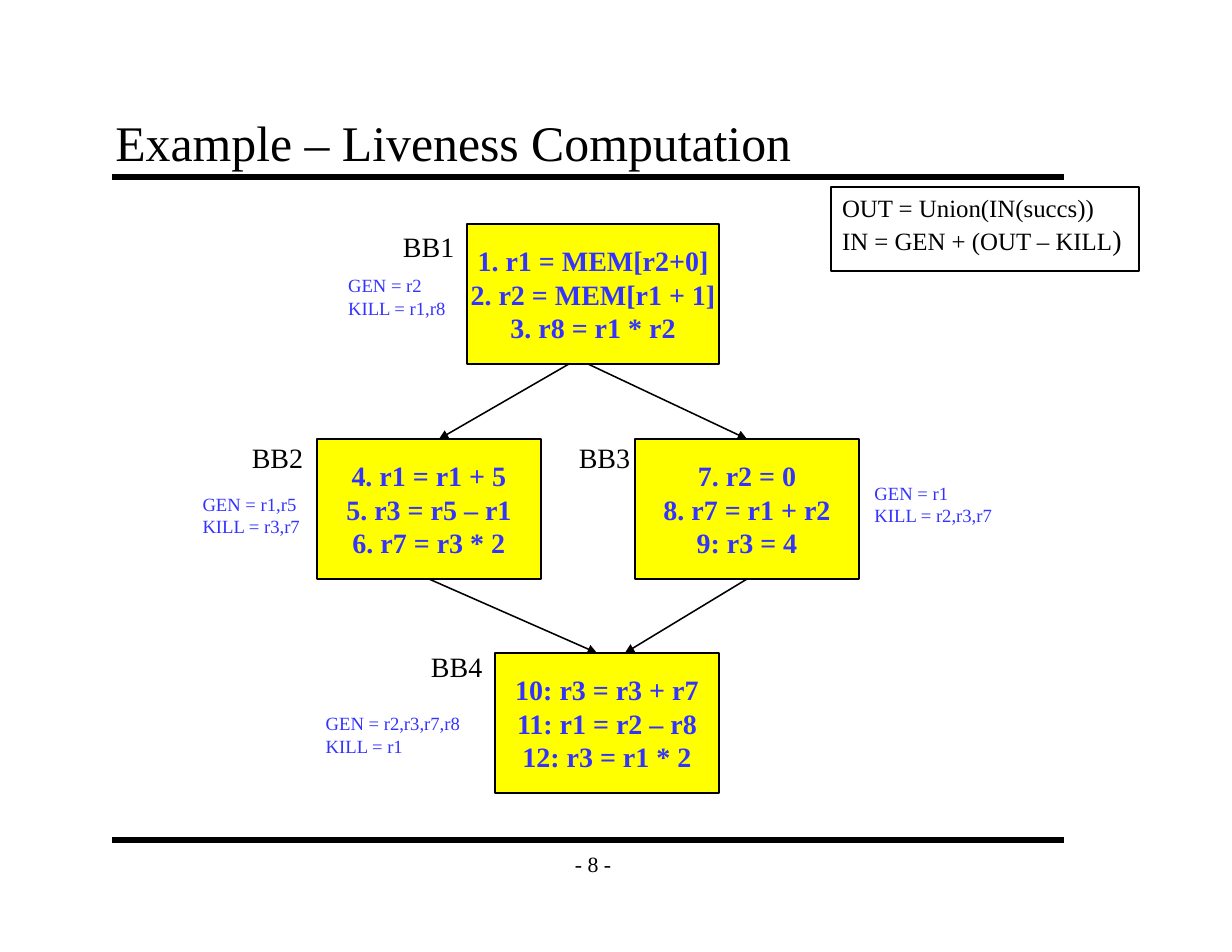
from lxml import etree
from pptx import Presentation
from pptx.dml.color import RGBColor
from pptx.enum.shapes import MSO_CONNECTOR, MSO_SHAPE
from pptx.enum.text import MSO_ANCHOR, PP_ALIGN
from pptx.oxml.ns import qn
from pptx.util import Inches, Pt

COLORS = {"black": "000000", "box": "FFFF00", "code": "3333FF"}
FONT = "Times New Roman"
TOP, BOTTOM = 0, 2

prs = Presentation()
prs.slide_width, prs.slide_height = Inches(11), Inches(8.5)
s = prs.slides.add_slide(prs.slide_layouts[6])


def write(sp, lines, size, color="black", bold=False, align=PP_ALIGN.LEFT,
          anchor=MSO_ANCHOR.TOP, inset=(0.1, 0.05)):
    """Fill a shape with lines; a line is a list of (text, size) or a string."""
    tf = sp.text_frame
    tf.word_wrap = False
    tf.vertical_anchor = anchor
    tf.margin_left = tf.margin_right = Inches(inset[0])
    tf.margin_top = tf.margin_bottom = Inches(inset[1])
    for i, line in enumerate(lines):
        p = tf.add_paragraph() if i else tf.paragraphs[0]
        p.alignment = align
        for text, pt in [(line, size)] if isinstance(line, str) else line:
            r = p.add_run()
            r.text = text
            r.font.name, r.font.size, r.font.bold = FONT, Pt(pt), bold
            r.font.color.rgb = RGBColor.from_string(COLORS[color])


def add_line(x1, y1, x2, y2, width, arrow=False):
    c = s.shapes.add_connector(MSO_CONNECTOR.STRAIGHT, Inches(x1), Inches(y1),
                               Inches(x2), Inches(y2))
    c.line.width = Pt(width)
    c.line.color.rgb = RGBColor.from_string(COLORS["black"])
    if arrow:
        etree.SubElement(c.line._get_or_add_ln(), qn("a:tailEnd"), type="triangle")
    etree.SubElement(c._element.spPr, qn("a:effectLst"))
    return c


# Rules above and below the content, page number, title
for y in (1.58, 7.5):
    add_line(1, y, 9.5, y, 4)
sp = s.shapes.add_textbox(Inches(4.92), Inches(7.5), Inches(0.75), Inches(0.42))
write(sp, ["- 8 -"], 14, align=PP_ALIGN.CENTER, anchor=MSO_ANCHOR.MIDDLE,
      inset=(0.11, 0.06))
sp = s.shapes.add_textbox(Inches(0.92), Inches(0.92), Inches(8.5), Inches(0.67))
write(sp, ["Example – Liveness Computation"], 32, anchor=MSO_ANCHOR.BOTTOM,
      inset=(0.11, 0.06))
sp.text_frame.word_wrap = True

# Dataflow equations with their frame
sp = s.shapes.add_textbox(Inches(7.42), Inches(1.67), Inches(2.7), Inches(0.67))
write(sp, ["OUT = Union(IN(succs))", [("IN = GEN + (OUT – KILL", 16), (")", 18)]], 16)
frame = s.shapes.add_shape(MSO_SHAPE.RECTANGLE, Inches(7.42), Inches(1.67),
                           Inches(2.75), Inches(0.75))
frame.shadow.inherit = False
frame.fill.background()
frame.line.width = Pt(1)
frame.line.color.rgb = RGBColor.from_string(COLORS["black"])

# Basic blocks: name, (left, top, width), code, label position,
# GEN/KILL (left, top, width), GEN/KILL text
blocks = [
    ("BB1", (4.17, 2, 2.25),
     ["1. r1 = MEM[r2+0]", "2. r2 = MEM[r1 + 1]", "3. r8 = r1 * r2"],
     (3.5, 2), (3.01, 2.4, 1.12), ["GEN = r2", "KILL = r1,r8"]),
    ("BB2", (2.83, 3.92, 2),
     ["4. r1 = r1 + 5", "5. r3 = r5 – r1", "6. r7 = r3 * 2"],
     (2.15, 3.88), (1.71, 4.35, 1.12), ["GEN = r1,r5", "KILL = r3,r7"]),
    ("BB3", (5.67, 3.92, 2),
     ["7. r2 = 0", "8. r7 = r1 + r2", "9: r3 = 4"],
     (5.07, 3.88), (7.71, 4.25, 1.3), ["GEN = r1", "KILL = r2,r3,r7"]),
    ("BB4", (4.42, 5.83, 2),
     ["10: r3 = r3 + r7", "11: r1 = r2 – r8", "12: r3 = r1 * 2"],
     (3.75, 5.75), (2.81, 6.31, 1.41), ["GEN = r2,r3,r7,r8", "KILL = r1"]),
]
boxes = {}
for name, (x, y, w), code, label_at, (gx, gy, gw), gen_kill in blocks:
    sp = s.shapes.add_shape(MSO_SHAPE.RECTANGLE, Inches(x), Inches(y),
                            Inches(w), Inches(1.25))
    sp.shadow.inherit = False
    sp.fill.solid()
    sp.fill.fore_color.rgb = RGBColor.from_string(COLORS["box"])
    sp.line.width = Pt(1)
    sp.line.color.rgb = RGBColor.from_string(COLORS["black"])
    write(sp, code, 18, "code", True, PP_ALIGN.CENTER, MSO_ANCHOR.MIDDLE)
    boxes[name] = sp

    label = s.shapes.add_textbox(Inches(label_at[0]), Inches(label_at[1]),
                                 Inches(0.66), Inches(0.4))
    write(label, [name], 18)
    sets = s.shapes.add_textbox(Inches(gx), Inches(gy), Inches(gw), Inches(0.5))
    write(sets, gen_kill, 12, "code")

# Control flow edges, joined where they meet the middle of a side
add_line(5.08, 3.25, 3.92, 3.92, 1, arrow=True)
c = add_line(5.25, 3.25, 6.67, 3.92, 1, arrow=True)
c.end_connect(boxes["BB3"], TOP)
for name, x1, x2 in [("BB3", 6.67, 5.58), ("BB2", 3.83, 5.33)]:
    c = add_line(x1, 5.17, x2, 5.83, 1, arrow=True)
    c.begin_connect(boxes[name], BOTTOM)

prs.save("out.pptx")
